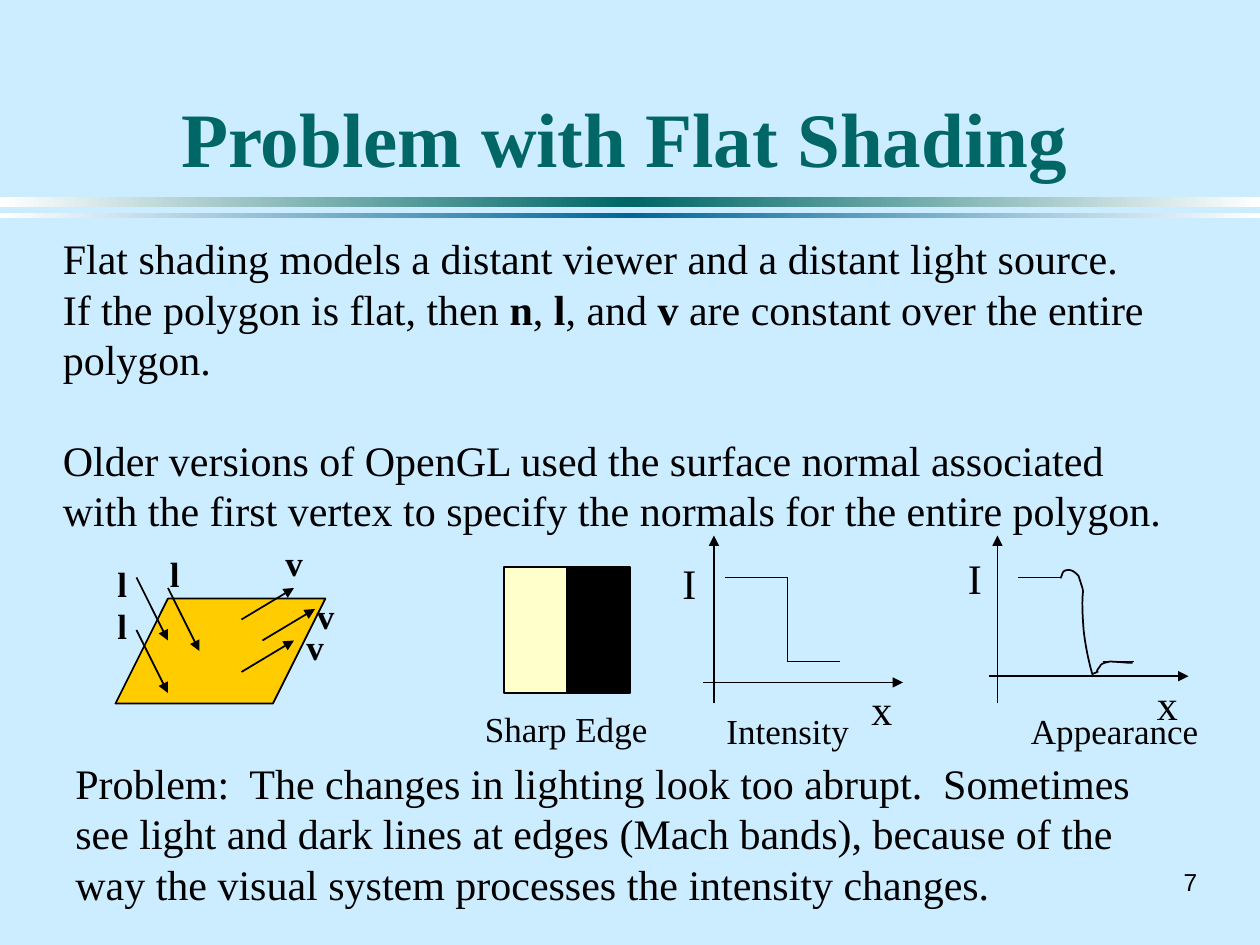
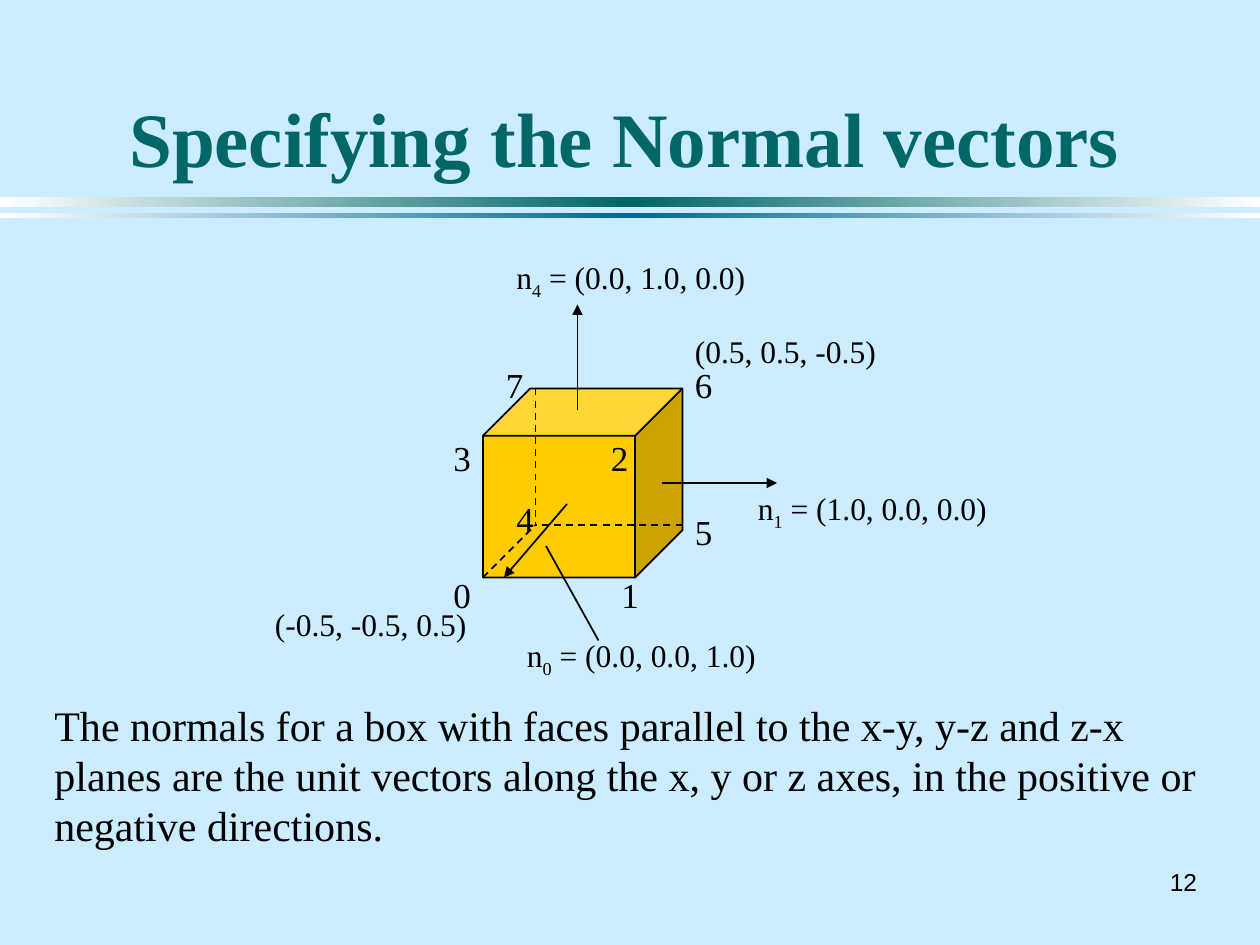
from copy import deepcopy
from dataclasses import dataclass

from lxml import etree
from pptx import Presentation
from pptx.dml.color import RGBColor
from pptx.enum.dml import MSO_LINE
from pptx.enum.shapes import MSO_CONNECTOR, MSO_SHAPE
from pptx.enum.text import MSO_ANCHOR, PP_ALIGN
from pptx.oxml.ns import qn
from pptx.util import Inches, Pt

RECTANGLE = MSO_SHAPE.RECTANGLE
PARALLELOGRAM = MSO_SHAPE.PARALLELOGRAM
CUBE = MSO_SHAPE.CUBE
STRAIGHT = MSO_CONNECTOR.STRAIGHT
DASH = MSO_LINE.DASH
LEFT, CENTER, RIGHT = PP_ALIGN.LEFT, PP_ALIGN.CENTER, PP_ALIGN.RIGHT
TOP, MIDDLE, BOTTOM = MSO_ANCHOR.TOP, MSO_ANCHOR.MIDDLE, MSO_ANCHOR.BOTTOM

WIDTH, HEIGHT = Inches(10), Inches(7.5)
COLUMNS, ROWS = 120, 90
BLANK = 6

COLORS = {
    "page": "CCECFF",
    "ink": "000000",
    "title": "006666",
    "band": "006699",
    "glow": "FFFFFF",
    "gold": "FFCC00",
    "cream": "FFFFCC",
}
TITLE = {"name": "Times New Roman", "size": Pt(44), "bold": True}
BODY = {"name": "Times New Roman", "size": Pt(24)}
LABEL = {"name": "Times New Roman", "size": Pt(20)}
VECTOR = {**LABEL, "bold": True}
COORDINATE = {"name": "Times New Roman", "size": Pt(18)}
NUMBER = {"name": "Arial", "size": Pt(14)}
BOLD = {"bold": True}
SUBSCRIPT = -25000


def color(name):
    return RGBColor.from_string(COLORS[name])


@dataclass
class Box:
    page: object
    column: float = 0
    row: float = 0
    columns: float = COLUMNS
    rows: float = ROWS

    def point(self, column, row):
        return (
            round((self.column + column) * WIDTH / COLUMNS),
            round((self.row + row) * HEIGHT / ROWS),
        )

    def frame(self, column, row, columns, rows):
        size = round(columns * WIDTH / COLUMNS), round(rows * HEIGHT / ROWS)
        return *self.point(column, row), *size


def add_text(box, place, paras, style, ink="ink", align=LEFT, anchor=TOP,
             wrap=False, gaps=()):
    frame = box.page.shapes.add_textbox(*box.frame(*place)).text_frame
    frame.word_wrap = wrap
    frame.vertical_anchor = anchor
    for index, spans in enumerate(paras):
        para = frame.paragraphs[0] if index == 0 else frame.add_paragraph()
        para.alignment = align
        if index < len(gaps):
            para.space_before = Pt(gaps[index])
        for text, extra, baseline in spans:
            span = para.add_run()
            span.text = text
            for name, value in {**style, **extra}.items():
                setattr(span.font, name, value)
            span.font.color.rgb = color(ink)
            if baseline:
                span._r.get_or_add_rPr().set("baseline", str(baseline))


def plain(text):
    return [(text, {}, 0)]


def add_label(box, column, row, columns, text, style=LABEL, rows=5.2):
    add_text(box, (column, row, columns, rows), [plain(text)], style)


def set_outline(shape):
    shape.line.color.rgb = color("ink")
    shape.line.width = Pt(1)


def add_block(box, kind, place, fill, adjustment=None):
    shape = box.page.shapes.add_shape(kind, *box.frame(*place))
    shape.shadow.inherit = False
    shape.fill.solid()
    shape.fill.fore_color.rgb = color(fill)
    set_outline(shape)
    if adjustment is not None:
        shape.adjustments[0] = adjustment


def add_line(box, start, end, arrow=False, dashed=False):
    line = box.page.shapes.add_connector(STRAIGHT, *box.point(*start), *box.point(*end))
    set_outline(line)
    if dashed:
        line.line.dash_style = DASH
    properties = line._element.spPr
    if arrow:
        outline = properties.find(qn("a:ln"))
        etree.SubElement(outline, qn("a:tailEnd")).set("type", "triangle")
    etree.SubElement(properties, qn("a:effectLst"))


def add_curve(box, start, segments, steps=12):
    outline = box.page.shapes.build_freeform(*box.point(*start))
    points = []
    for first, second, end in segments:
        corners = start, first, second, end
        for step in range(1, steps + 1):
            t = step / steps
            weights = (1 - t) ** 3, 3 * t * (1 - t) ** 2, 3 * t * t * (1 - t), t ** 3
            points.append(box.point(*(
                sum(weight * corner[axis] for weight, corner in zip(weights, corners))
                for axis in (0, 1)
            )))
        start = end
    outline.add_line_segments(points, close=False)
    curve = outline.convert_to_shape()
    curve.shadow.inherit = False
    curve.fill.background()
    set_outline(curve)


def add_band(box, row, rows, middle):
    band = box.page.shapes.add_shape(RECTANGLE, *box.frame(0, row, COLUMNS, rows))
    band.shadow.inherit = False
    band.line.fill.background()
    band.fill.gradient()
    band.fill.gradient_angle = 0
    stops = band._element.spPr.find(".//" + qn("a:gsLst"))
    stops.append(deepcopy(stops[0]))
    names = "glow", middle, "glow"
    for index, (stop, name) in enumerate(zip(band.fill.gradient_stops, names)):
        stop.position = index / 2
        stop.color.rgb = color(name)


def add_page(deck, title, number):
    page = deck.slides.add_slide(deck.slide_layouts[BLANK])
    page.background.fill.solid()
    page.background.fill.fore_color.rgb = color("page")
    box = Box(page)
    add_band(box, 18.75, 1, "title")
    add_band(box, 20.25, 0.5, "band")
    add_text(box, (110, 82, 5.2, 4), [plain(number)], NUMBER, align=RIGHT, anchor=MIDDLE)
    add_text(box, (8, 3, 103, 15), [plain(title)], TITLE, "title", CENTER, BOTTOM, True)
    return box


def place_polygon(box):
    add_block(box, PARALLELOGRAM, (0, 0, box.columns, box.rows), "gold", 0.5)
    rays = [
        ("l", 3.4, (3, 6), [(2, -2), (5, -1), (2, 3)], [(-1, -4), (4, -5), (-1, 0)]),
        ("v", 4.1, (5, -3), [(12, 2), (14, 4), (12, 7)], [(15, -6), (18, -1), (17, 2)]),
    ]
    for letter, width, (across, down), starts, labels in rays:
        for column, row in starts:
            add_line(box, (column, row), (column + across, row + down), arrow=True)
        for place in labels:
            add_label(box, *place, width, letter, VECTOR)


def place_sharp_edge(box):
    half = box.columns / 2
    for index, fill in enumerate(("cream", "ink")):
        add_block(box, RECTANGLE, (index * half, 0, half, box.rows), fill)
    add_label(box, -3, 12.8, 18.2, "Sharp Edge")


def place_axes(box, origin, intensity, position, caption):
    column, row = origin
    add_line(box, origin, (column + 19, row), arrow=True)
    add_line(box, (0, 16), (0, 0), arrow=True)
    add_label(box, *intensity, 3.7, "I", BODY, 6)
    add_label(box, *position, 4.4, "x", BODY, 6)
    add_label(box, *caption)


def place_intensity(box):
    place_axes(box, (-1, 14), (-4.2, 1.5), (13.8, 13.5), (0, 16, 14.5, "Intensity"))
    corners = [(1, 4), (7, 4), (7, 12), (12, 12)]
    for start, end in zip(corners, corners[1:]):
        add_line(box, start, end)


def place_appearance(box):
    place_axes(box, (-0.8, 13.4), (-4, 1), (14, 13), (2, 16, 18.6, "Appearance"))
    add_line(box, (2, 4), (6, 4))
    add_line(box, (10, 12), (13, 12))
    add_curve(box, (6, 4.08), [
        ((6.16, 3.84), (6.16, 3.48), (6.4, 3.36)),
        ((7, 3.12), (7.36, 3.48), (7.72, 3.84)),
        ((8.56, 6.36), (7.84, 4.08), (8.2, 8.88)),
        ((8.32, 10.2), (8.68, 12), (9.04, 13.2)),
        ((10.12, 12.72), (9.04, 13.32), (9.76, 12.48)),
        ((9.88, 12.12), (10.36, 12.12), (10.72, 12)),
        ((12.76, 12.12), (12.04, 12.12), (12.88, 12.12)),
    ])


def place_cube(box):
    add_block(box, CUBE, (0, 0, box.columns, box.rows), "gold", 0.25)
    for start, end in [((17, 9), (28, 9)), ((9, 2), (9, -8)), ((8, 11), (2, 18))]:
        add_line(box, start, end, arrow=True)
    hidden = 5, 13
    for corner in [(0, 18), (5, 0), (19, 13)]:
        add_line(box, corner, hidden, dashed=True)
    add_line(box, (11, 24), (6, 15))
    vertices = [(-4, 17), (12, 17), (11, 4), (-4, 4), (2, 9.8), (19, 11), (19, -3), (1, -3)]
    for number, place in enumerate(vertices):
        add_label(box, *place, 4.1, str(number))
    add_label(box, -21, 20, 21, "(-0.5, -0.5, 0.5)", COORDINATE, 4.8)
    add_label(box, 19, -6, 20, "(0.5, 0.5, -0.5)", COORDINATE, 4.8)
    normals = [
        ("0", (3, 23), "(0.0, 0.0, 1.0)"),
        ("1", (25, 9), "(1.0, 0.0, 0.0)"),
        ("4", (2, -13), "(0.0, 1.0, 0.0)"),
    ]
    for face, place, value in normals:
        spans = [("n", {}, 0), (face, {}, SUBSCRIPT), (f" = {value}", {}, 0)]
        add_text(box, (*place, 24.5, 4.8), [spans], COORDINATE)


def build_flat_shading(deck):
    box = add_page(deck, "Problem with Flat Shading", "7")
    page = box.page
    constants = [
        ("If the polygon is flat, then ", {}, 0), ("n", BOLD, 0), (", ", {}, 0),
        ("l", BOLD, 0), (", and ", {}, 0), ("v", BOLD, 0),
        (" are constant over the entire polygon.", {}, 0),
    ]
    paras = [
        plain("Flat shading models a distant viewer and a distant light source."),
        constants,
        plain("Older versions of OpenGL used the surface normal associated with the "
              "first vertex to specify the normals for the entire polygon."),
    ]
    add_text(box, (4.8, 21.6, 107.2, 30.2), paras, BODY, wrap=True, gaps=(0, 0, 28.5))
    problem = ("Problem:  The changes in lighting look too abrupt.  Sometimes see light "
               "and dark lines at edges (Mach bands), because of the way the visual "
               "system processes the intensity changes.")
    add_text(box, (6, 71.55, 108.2, 15.6), [plain(problem)], BODY, wrap=True)
    place_polygon(Box(page, 11, 57, 20, 10))
    place_sharp_edge(Box(page, 48, 54, 12, 12))
    place_intensity(Box(page, 68, 51, 18, 16))
    place_appearance(Box(page, 95, 51, 18, 16))


def build_normal_vectors(deck):
    box = add_page(deck, "Specifying the Normal vectors", "12")
    place_cube(Box(box.page, 46, 37, 19, 18))
    summary = ("The normals for a box with faces parallel to the x-y, y-z and z-x planes "
               "are the unit vectors along the x, y or z axes, in the positive or "
               "negative directions.")
    add_text(box, (4, 66, 114, 15.6), [plain(summary)], BODY, wrap=True)


def main():
    deck = Presentation()
    deck.slide_width, deck.slide_height = WIDTH, HEIGHT
    build_flat_shading(deck)
    build_normal_vectors(deck)
    deck.save("out.pptx")


if __name__ == "__main__":
    main()
